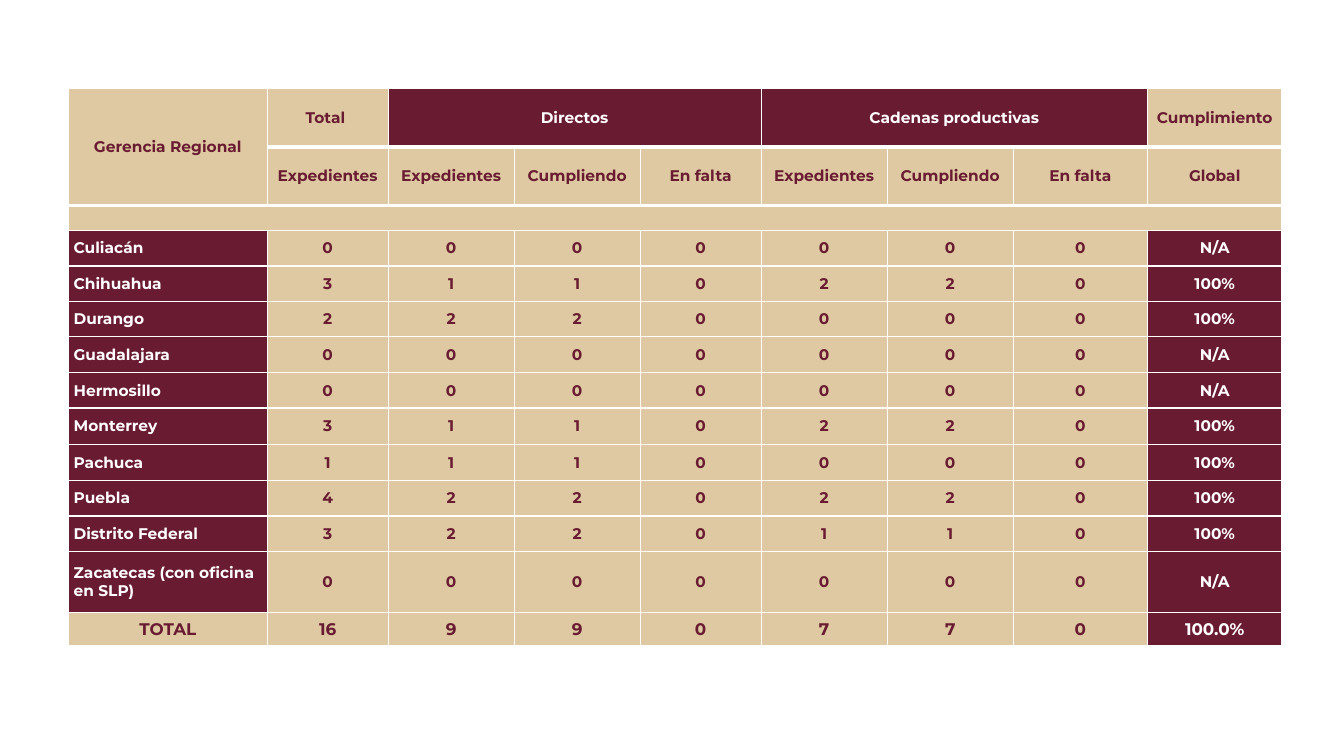
from lxml.etree import SubElement as Sub
from pptx import Presentation
from pptx.dml.color import RGBColor as Rgb
from pptx.enum.text import MSO_ANCHOR as Anchor, PP_ALIGN as Align
from pptx.oxml.ns import qn
from pptx.util import Inches, Pt

WIDE, HIGH = Inches(13.33), Inches(7.5)
WINE, SAND, WHITE = "691B31", "DEC9A2", "FFFFFF"
COLS = [14.78, 9, 9.38, 9.38, 9, 9.38, 9.38, 10, 10]
ROWS = [7.73, 7.73, 3.33, 4.67, 4.67, 4.67, 4.8, 4.67, 4.8, 4.8, 4.67, 4.67, 8.13, 4.4]
HEAD = [
    ["Gerencia Regional", "Total ", "Directos", "", "", "Cadenas productivas", "", "", "Cumplimiento"],
    ["", "Expedientes"] + ["Expedientes", "Cumpliendo", "En falta"] * 2 + ["Global"],
    [""] * 9,
]
DATA = [
    ("Culiacán", "0 0 0 0 0 0 0 N/A"),
    ("Chihuahua", "3 1 1 0 2 2 0 100%"),
    ("Durango", "2 2 2 0 0 0 0 100%"),
    ("Guadalajara", "0 0 0 0 0 0 0 N/A"),
    ("Hermosillo", "0 0 0 0 0 0 0 N/A"),
    ("Monterrey", "3 1 1 0 2 2 0 100%"),
    ("Pachuca", "1 1 1 0 0 0 0 100%"),
    ("Puebla", "4 2 2 0 2 2 0 100%"),
    ("Distrito Federal", "3 2 2 0 1 1 0 100%"),
    ("Zacatecas (con oficina en SLP)", "0 0 0 0 0 0 0 N/A"),
    ("TOTAL", "16 9 9 0 7 7 0 100.0%"),
]
MERGES = [(0, 0, 1, 0), (0, 2, 0, 4), (0, 5, 0, 7), (2, 0, 2, 8)]


def color(code):
    return Rgb.from_string(code)


def across(share):
    return round(WIDE * share / 100)


def down(share):
    return round(HIGH * share / 100)


def apply(item, style):
    for name, value in style.items():
        setattr(item, name, value)


def border(cell, row):
    props = cell._tc.get_or_add_tcPr()
    top = 3 if row in (1, 2) else 1
    base = 3 if row in (0, 1) else 1
    for side, width in {"L": 1, "R": 1, "T": top, "B": base}.items():
        line = Sub(props, qn(f"a:ln{side}"), w=str(Pt(width)))
        fill = Sub(line, qn("a:solidFill"))
        Sub(fill, qn("a:srgbClr"), val=WHITE)


def is_dark(row, col):
    if row == 0:
        return 2 <= col <= 7
    last = len(ROWS) - 1
    return row > 2 and (col == 8 or (col == 0 and row < last))


def write(cell, text, row, col):
    dark = is_dark(row, col)
    size = 12 if row == len(ROWS) - 1 else 11
    apply(cell, {
        "margin_left": Inches(0.05), "margin_right": Inches(0.05),
        "margin_top": 0, "margin_bottom": 0,
        "vertical_anchor": Anchor.MIDDLE,
    })
    border(cell, row)
    cell.fill.solid()
    cell.fill.fore_color.rgb = color(WINE if dark else SAND)
    para = cell.text_frame.paragraphs[0]
    para.alignment = Align.LEFT if dark and col == 0 else Align.CENTER
    if not text:
        Sub(para._p, qn("a:endParaRPr"), sz=str(size * 100))
        return
    run = para.add_run()
    run.text = text
    apply(run.font, {"name": "Montserrat", "size": Pt(size), "bold": True})
    run.font.color.rgb = color(WHITE if dark else WINE)


def add_grid(slide, lines):
    frame = slide.shapes.add_table(
        len(ROWS), len(COLS), across(5.1), down(11.73),
        across(sum(COLS)), down(sum(ROWS)))
    table = frame.table
    apply(table, {"first_row": False, "horz_banding": False})
    for col, share in zip(table.columns, COLS):
        col.width = across(share)
    for row, share in zip(table.rows, ROWS):
        row.height = down(share)
    for row, line in enumerate(lines):
        for col, text in enumerate(line):
            write(table.cell(row, col), text, row, col)
    for top, left, base, right in MERGES:
        table.cell(top, left).merge(table.cell(base, right))


def main():
    deck = Presentation()
    apply(deck, {"slide_width": WIDE, "slide_height": HIGH})
    slide = deck.slides.add_slide(deck.slide_layouts[6])
    add_grid(slide, HEAD + [[name] + values.split() for name, values in DATA])
    deck.save("out.pptx")


if __name__ == "__main__":
    main()
